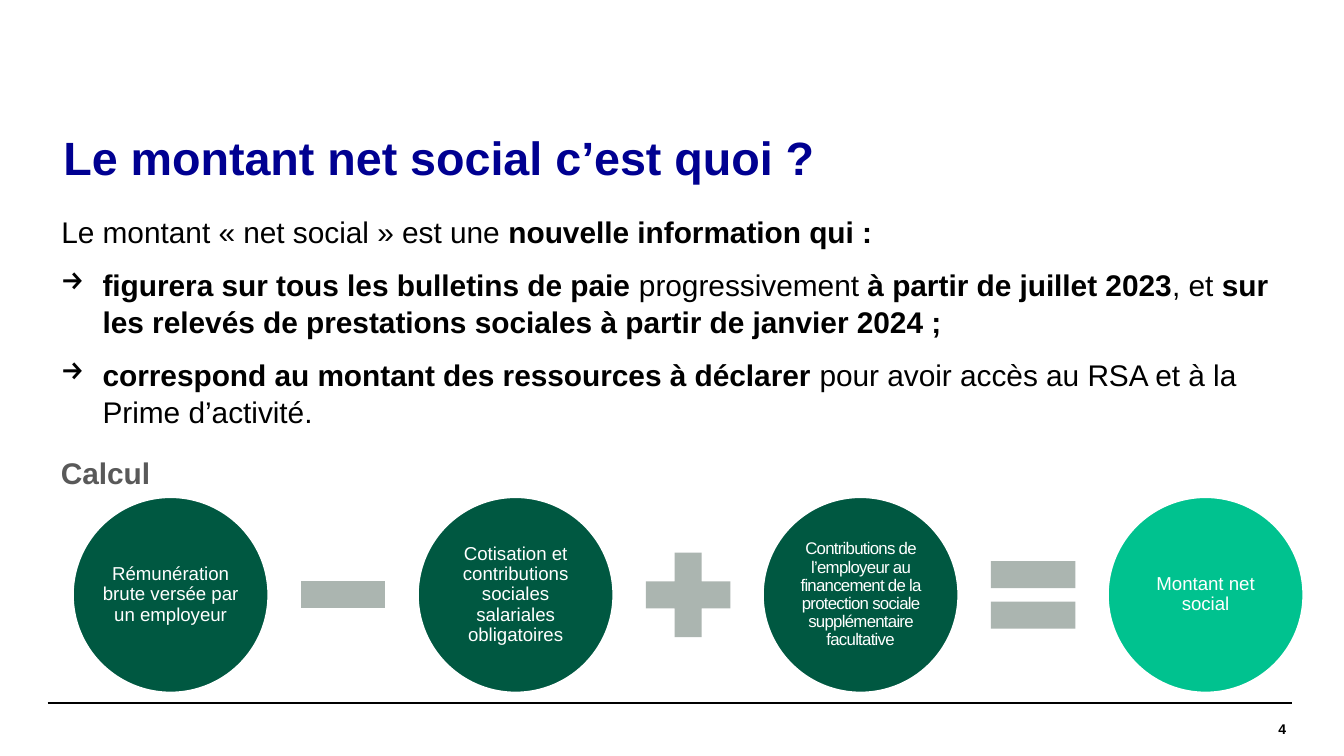
from lxml import etree
from pptx import Presentation
from pptx import util as u
from pptx.dml import color as dml
from pptx.enum import shapes, text
from pptx.oxml import ns


def rgb(value):
    return dml.RGBColor.from_string(value)


class SlideBuilder:
    font = "Arial"
    black = "000000"
    white = "FFFFFF"
    navy = "000091"
    grey = "595959"
    dark_green = "005841"
    light_green = "00C28F"
    symbol_grey = "ABB5B0"

    def __init__(self, slide):
        self.slide = slide

    def style_runs(self, paragraph, size, color, bold=False, tracking=0):
        for run in paragraph.runs:
            run.font.name = self.font
            run.font.size = u.Pt(size)
            run.font.bold = bold
            run.font.color.rgb = rgb(color)
            if tracking:
                run.font._element.set("spc", str(tracking))

    def set_indent(self, paragraph, margin, first_line, bullet=None):
        properties = paragraph._p.get_or_add_pPr()
        properties.set("marL", str(u.Cm(margin)))
        properties.set("indent", str(u.Cm(first_line)))
        if bullet:
            etree.SubElement(properties, ns.qn("a:buChar")).set("char", bullet)

    def set_frame(self, frame, inset, anchor):
        frame.word_wrap = True
        frame.vertical_anchor = anchor
        frame.margin_left = frame.margin_right = u.Cm(inset)
        frame.margin_top = frame.margin_bottom = u.Cm(inset)

    def text_box(self, left, top, width, height, anchor=text.MSO_ANCHOR.TOP):
        box = self.slide.shapes.add_textbox(u.Cm(left), u.Cm(top), u.Cm(width), u.Cm(height))
        self.set_frame(box.text_frame, 0, anchor)
        return box.text_frame

    def label(self, content, box, size, color, indent=0, spacing=1.0,
              anchor=text.MSO_ANCHOR.MIDDLE, align=text.PP_ALIGN.LEFT):
        frame = self.text_box(*box, anchor)
        frame.text = content
        paragraph = frame.paragraphs[0]
        self.set_indent(paragraph, indent, 0)
        paragraph.alignment = align
        paragraph.line_spacing = spacing
        self.style_runs(paragraph, size, color, bold=True)

    def body(self, items, box, size):
        frame = self.text_box(*box)
        for index, (content, bullet) in enumerate(items):
            paragraph = frame.add_paragraph() if index else frame.paragraphs[0]
            if bullet:
                self.set_indent(paragraph, 1.04, -0.79, bullet)
            else:
                self.set_indent(paragraph, 0.26, 0)
            paragraph.line_spacing = 1.05
            paragraph.space_after = u.Pt(8)
            for part in content.split("*"):
                paragraph.add_run().text = part
            self.style_runs(paragraph, size, self.black)
            for run in paragraph.runs[1::2]:
                run.font.bold = True
            for run in paragraph.runs:
                if not run.text:
                    paragraph._p.remove(run._r)

    def shape(self, kind, left, top, size, fill):
        shape = self.slide.shapes.add_shape(kind, u.Cm(left), u.Cm(top), u.Cm(size), u.Cm(size))
        shape.shadow.inherit = False
        shape.fill.solid()
        shape.fill.fore_color.rgb = rgb(fill)
        shape.line.fill.background()
        return shape

    def circle(self, content, left, top, size, fill, text_size, tracking):
        shape = self.shape(shapes.MSO_SHAPE.OVAL, left, top, size, fill)
        shape.line.color.rgb = rgb(self.white)
        shape.line.width = u.Pt(2)
        frame = shape.text_frame
        self.set_frame(frame, 0.03, text.MSO_ANCHOR.MIDDLE)
        frame.text = content
        paragraph = frame.paragraphs[0]
        paragraph.alignment = text.PP_ALIGN.CENTER
        paragraph.line_spacing = 0.9
        self.style_runs(paragraph, text_size, self.white, tracking=tracking)

    def rule(self, left, right, top):
        line = self.slide.shapes.add_connector(
            shapes.MSO_CONNECTOR.STRAIGHT, u.Cm(left), u.Cm(top), u.Cm(right), u.Cm(top))
        line.line.color.rgb = rgb(self.black)
        line.line.width = u.Pt(0.8)
        etree.SubElement(line._element.spPr, ns.qn("a:effectLst"))


def main():
    presentation = Presentation()
    presentation.slide_width = u.Cm(25.4)
    presentation.slide_height = u.Cm(14.29)
    builder = SlideBuilder(presentation.slides.add_slide(presentation.slide_layouts[6]))

    for left in (0.9, 1.0):
        builder.rule(left, left + 23.41, 13.29)
    builder.label("4", (20.55, 13.29, 3.76, 0.99), 7.5, builder.black,
                  align=text.PP_ALIGN.RIGHT)
    builder.label("Le montant net social c’est quoi ?", (0.9, 2.29, 23.4, 1.5), 25,
                  builder.navy, indent=0.3, spacing=0.9)
    builder.body([
        ("Le montant « net social » est une *nouvelle information qui :*", None),
        ("*figurera sur tous les bulletins de paie *progressivement *à partir de juillet 2023*"
         ", et *sur les relevés de prestations sociales à partir de janvier 2024 ;*", "→"),
        ("*correspond au montant des ressources à déclarer *"
         "pour avoir accès au RSA et à la Prime d’activité.", "→"),
    ], (0.9, 4.01, 23.4, 4.19), 16)

    circle_left, circle_top, circle_size, pitch = 1.36, 9.38, 3.73, 6.52
    symbol_size = 2.17
    symbol_offset = (circle_size + pitch - symbol_size) / 2
    symbol_top = circle_top + (circle_size - symbol_size) / 2
    terms = [
        ("Rémunération brute versée par un employeur",
         builder.dark_green, 10, 0, shapes.MSO_SHAPE.MATH_MINUS),
        ("Cotisation et contributions sociales salariales obligatoires",
         builder.dark_green, 10, 0, shapes.MSO_SHAPE.MATH_PLUS),
        ("Contributions de l’employeur au financement de la protection sociale "
         "supplémentaire facultative",
         builder.dark_green, 9, -40, shapes.MSO_SHAPE.MATH_EQUAL),
        ("Montant net social", builder.light_green, 10, 0, None),
    ]
    for index, (content, fill, size, tracking, symbol) in enumerate(terms):
        left = circle_left + index * pitch
        builder.circle(content, left, circle_top, circle_size, fill, size, tracking)
        if symbol:
            builder.shape(symbol, left + symbol_offset, symbol_top, symbol_size,
                          builder.symbol_grey)

    builder.label("Calcul", (0.9, 8.56, 3.2, 1.47), 16, builder.grey, indent=0.25,
                  spacing=1.05, anchor=text.MSO_ANCHOR.TOP)
    presentation.save("out.pptx")


if __name__ == "__main__":
    main()
